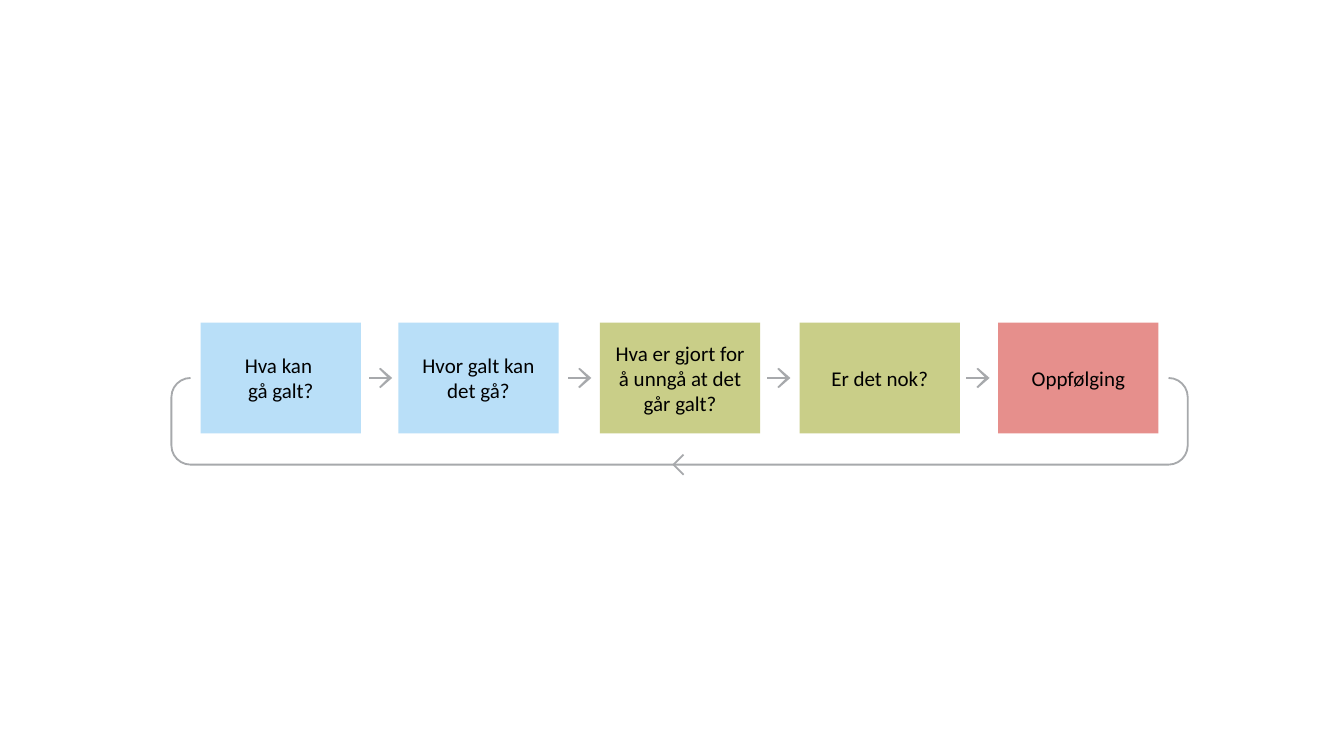
from math import cos, radians, sin

from lxml.etree import SubElement
from pptx import Presentation
from pptx.dml.color import RGBColor
from pptx.enum.shapes import MSO_CONNECTOR as Conn, MSO_SHAPE as Shape
from pptx.enum.text import MSO_ANCHOR as Anchor, PP_ALIGN as Align
from pptx.oxml.ns import qn
from pptx.util import Inches, Pt

BLUE = RGBColor(0xB9, 0xDF, 0xF8)
GREEN = RGBColor(0xC9, 0xCE, 0x88)
RED = RGBColor(0xE6, 0x8F, 0x8C)
GREY = RGBColor(0xA7, 0xA9, 0xAC)
BLACK = RGBColor(0, 0, 0)

# The grid has square cells of a tenth of an inch
COLS, ROWS = 133.3, 75
MID_ROW = 37.5
BOX_TOP, BOX_W, BOX_H = 32, 15.9, 11
ARROW_LEFT, ARROW_STEP = 36.6, 19.75
LOOP_LEFT, LOOP_RIGHT, LOOP_BOTTOM, RADIUS = 17, 117.8, 46.1, 1.9

# Column, colour and paragraphs of each step
STEPS = [
    (19.9, BLUE, ["Hva kan ", "gå galt?"]),
    (39.5, BLUE, ["Hvor galt kan det gå?"]),
    (59.5, GREEN, ["Hva er gjort for å unngå at det går galt?"]),
    (79.3, GREEN, ["Er det nok?"]),
    (99, RED, ["Oppfølging"]),
]


def grid(cells):
    return Inches(cells / 10)


class Flow:
    FONT = {"name": "Calibri", "size": Pt(15)}
    FRAME = {"word_wrap": True, "vertical_anchor": Anchor.MIDDLE}

    def __init__(self, slide):
        self.shapes = slide.shapes

    def box(self, col, color, lines):
        sp = self.shapes.add_shape(Shape.RECTANGLE, grid(col), grid(BOX_TOP),
                                   grid(BOX_W), grid(BOX_H))
        sp.shadow.inherit = False
        sp.fill.solid()
        sp.fill.fore_color.rgb = color
        sp.line.fill.background()
        tf = sp.text_frame
        for key, value in self.FRAME.items():
            setattr(tf, key, value)
        tf.text = "\n".join(lines)
        for p in tf.paragraphs:
            p.alignment = Align.CENTER
            for r in p.runs:
                for key, value in self.FONT.items():
                    setattr(r.font, key, value)
                r.font.color.rgb = BLACK

    def stroke(self, line, width):
        line.color.rgb = GREY
        line.width = Pt(width)

    def outline(self, points, filled=False):
        pts = [(grid(x), grid(y)) for x, y in points]
        builder = self.shapes.build_freeform(*pts[0])
        builder.add_line_segments(pts[1:], close=filled)
        sp = builder.convert_to_shape()
        sp.shadow.inherit = False
        if filled:
            sp.fill.solid()
            sp.fill.fore_color.rgb = GREY
            sp.line.fill.background()
        else:
            sp.fill.background()
            self.stroke(sp.line, 1.31)

    def arrow(self, left):
        cn = self.shapes.add_connector(Conn.STRAIGHT, grid(left), grid(MID_ROW),
                                       grid(left + 2), grid(MID_ROW))
        SubElement(cn._element.spPr, qn("a:effectLst"))
        self.stroke(cn.line, 1.19)
        head = [(1.15, -1), (1, -0.9), (1.9, 0), (1, 0.9), (1.15, 1), (2.3, 0)]
        self.outline([(left + x, MID_ROW + y) for x, y in head], filled=True)

    def loop(self):
        west, east = LOOP_LEFT + RADIUS, LOOP_RIGHT - RADIUS
        top, bottom = MID_ROW + RADIUS, LOOP_BOTTOM - RADIUS
        corners = [(east, top), (east, bottom), (west, bottom), (west, top)]
        self.outline([
            (x + RADIUS * cos(radians(angle)), y + RADIUS * sin(radians(angle)))
            for i, (x, y) in enumerate(corners)
            for angle in range(90 * i - 90, 90 * i + 1, 15)
        ])
        tip = 66.8
        self.outline([(tip + 1, LOOP_BOTTOM + 1), (tip, LOOP_BOTTOM),
                      (tip + 1, LOOP_BOTTOM - 1)])


def main():
    prs = Presentation()
    prs.slide_width, prs.slide_height = grid(COLS), grid(ROWS)
    flow = Flow(prs.slides.add_slide(prs.slide_layouts[6]))

    # Return loop and arrows between the steps
    flow.loop()
    for i in range(len(STEPS) - 1):
        flow.arrow(ARROW_LEFT + i * ARROW_STEP)

    # Step boxes
    for col, color, lines in STEPS:
        flow.box(col, color, lines)

    prs.save("out.pptx")


if __name__ == "__main__":
    main()
